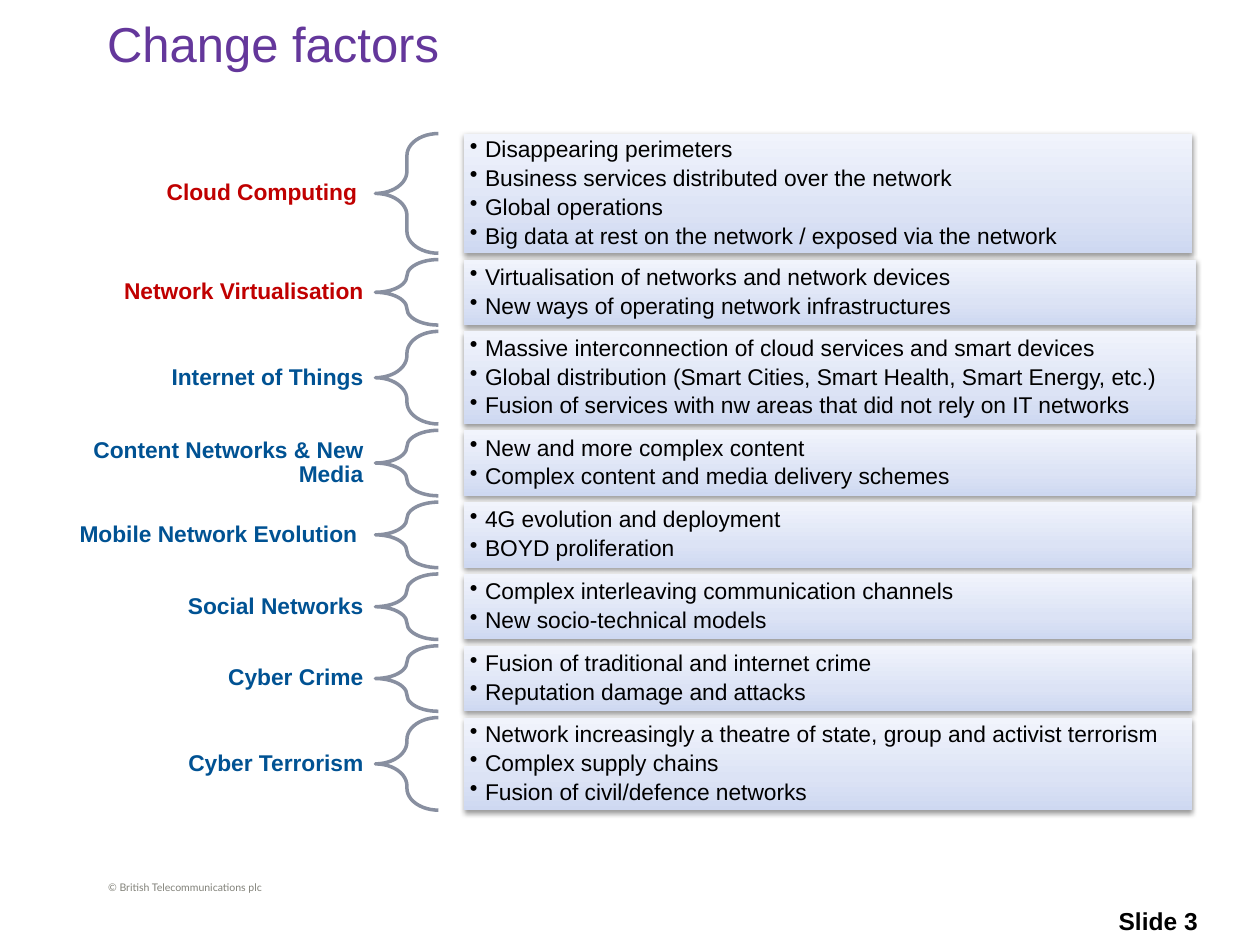
from copy import deepcopy

from lxml import etree
from pptx import Presentation
from pptx import util as u
from pptx.dml.color import RGBColor
from pptx.enum import shapes, text
from pptx.oxml import ns

RED, BLUE = "C00000", "005293"
WIDE, NARROW = 5.81, 5.78
FACTORS = [
    ("Cloud Computing ", RED, NARROW, [
        "Disappearing perimeters",
        "Business services distributed over the network",
        "Global operations",
        "Big data at rest on the network / exposed via the network"]),
    ("Network Virtualisation", RED, WIDE, [
        "Virtualisation of networks and network devices",
        "New ways of operating network infrastructures"]),
    ("Internet of Things", BLUE, WIDE, [
        "Massive interconnection of cloud services and smart devices",
        "Global distribution (Smart Cities, Smart Health, Smart Energy, etc.)",
        "Fusion of services with nw areas that did not rely on IT networks"]),
    ("Content Networks & New Media", BLUE, WIDE, [
        "New and more complex content",
        "Complex content and media delivery schemes"]),
    ("Mobile Network Evolution ", BLUE, NARROW, [
        "4G evolution and deployment",
        "BOYD proliferation"]),
    ("Social Networks", BLUE, NARROW, [
        "Complex interleaving communication channels",
        "New socio-technical models"]),
    ("Cyber Crime", BLUE, NARROW, [
        "Fusion of traditional and internet crime",
        "Reputation damage and attacks"]),
    ("Cyber Terrorism", BLUE, NARROW, [
        "Network increasingly a theatre of state, group and activist terrorism",
        "Complex supply chains",
        "Fusion of civil/defence networks"]),
]
GRADIENT = [(0, "CED8F1"), (0.35, "DCE3F5"), (1, "F1F4FC")]
SHADOW = (
    f'<a:effectLst {ns.nsdecls("a")}><a:outerShdw blurRad="{u.Pt(3.1)}" '
    f'dist="{u.Pt(1.6)}" dir="5400000" rotWithShape="0"><a:srgbClr val="000000">'
    '<a:alpha val="38000"/></a:srgbClr></a:outerShdw></a:effectLst>')

# Columns and rows, in inches
LABEL_X, LABEL_W = 0.47, 2.51
BRACE_X, BRACE_W = 2.98, 0.5
BOX_X = 3.68
TOP, LINE_H, PAD, GAP = 1.06, 0.215, 0.09, 0.05


def rgb(value):
    return RGBColor.from_string(value)


def write(sp, lines, size, color, name="Arial", bold=False,
          align=text.PP_ALIGN.LEFT, inset=(0.1, 0.05)):
    """Fill a shape with one paragraph per line, all in the same format."""
    tf = sp.text_frame
    tf.word_wrap = True
    tf.vertical_anchor = text.MSO_ANCHOR.MIDDLE
    tf.margin_left = tf.margin_right = u.Inches(inset[0])
    tf.margin_top = tf.margin_bottom = u.Inches(inset[1])
    tf.text = "\n".join(lines)
    for p in tf.paragraphs:
        p.alignment = align
        for r in p.runs:
            r.font.size, r.font.name, r.font.bold = u.Pt(size), name, bold
            r.font.color.rgb = rgb(color)
    return tf


prs = Presentation()
prs.slide_width, prs.slide_height = u.Inches(10), u.Inches(7.5)
s = prs.slides.add_slide(prs.slide_layouts[5])

title = s.shapes.title
title.left, title.top = u.Inches(0.75), u.Inches(0.05)
title.width, title.height = u.Inches(8.5), u.Inches(0.58)
write(title, ["Change factors"], 28, "64379B")

sp = s.shapes.add_textbox(*map(u.Inches, (0.76, 6.94, 1.51, 0.21)))
write(sp, ["© British Telecommunications plc"], 6, "82827A", name="Lato")
sp = s.shapes.add_textbox(*map(u.Inches, (8.78, 7.14, 0.96, 0.34)))
write(sp, ["Slide 3"], 14, "000000", bold=True).word_wrap = False

y = TOP
for label, color, box_w, points in FACTORS:
    h = PAD + LINE_H * len(points)
    label_h = 0.45 if len(label) > 25 else 0.28

    sp = s.shapes.add_textbox(*map(
        u.Inches, (LABEL_X, y + (h - label_h) / 2, LABEL_W, label_h)))
    tf = write(sp, [label], 13, color, bold=True,
               align=text.PP_ALIGN.RIGHT, inset=(0.1, 0.04))
    tf.paragraphs[0].line_spacing = 0.9

    brace = s.shapes.add_shape(shapes.MSO_SHAPE.LEFT_BRACE, *map(
        u.Inches, (BRACE_X, y, BRACE_W, h)))
    brace.adjustments[0], brace.adjustments[1] = 0.35, 0.5
    brace.shadow.inherit = False
    brace.fill.background()
    brace.line.color.rgb = rgb("888FA0")
    brace.line.width = u.Pt(2)

    box = s.shapes.add_shape(shapes.MSO_SHAPE.RECTANGLE, *map(
        u.Inches, (BOX_X, y, box_w, h)))
    box.line.fill.background()
    box.fill.gradient()
    box.fill.gradient_angle = 90
    stops = box._element.spPr.find(".//" + ns.qn("a:gsLst"))
    stops.insert(1, deepcopy(stops[0]))
    for stop, (position, shade) in zip(box.fill.gradient_stops, GRADIENT):
        stop.position = position
        stop.color.rgb = rgb(shade)
    box._element.spPr.append(etree.fromstring(SHADOW))

    tf = write(box, points, 13, "000000", inset=(0.05, 0.05))
    for p in tf.paragraphs:
        p.level = 1
        pPr = p._p.get_or_add_pPr()
        pPr.set("marL", str(u.Inches(0.12)))
        pPr.set("indent", str(-u.Inches(0.12)))
        etree.SubElement(pPr, ns.qn("a:buChar")).set("char", "•")
        p.line_spacing = 0.9
        p.space_after = u.Pt(2.4)

    y += h + GAP

prs.save("out.pptx")
